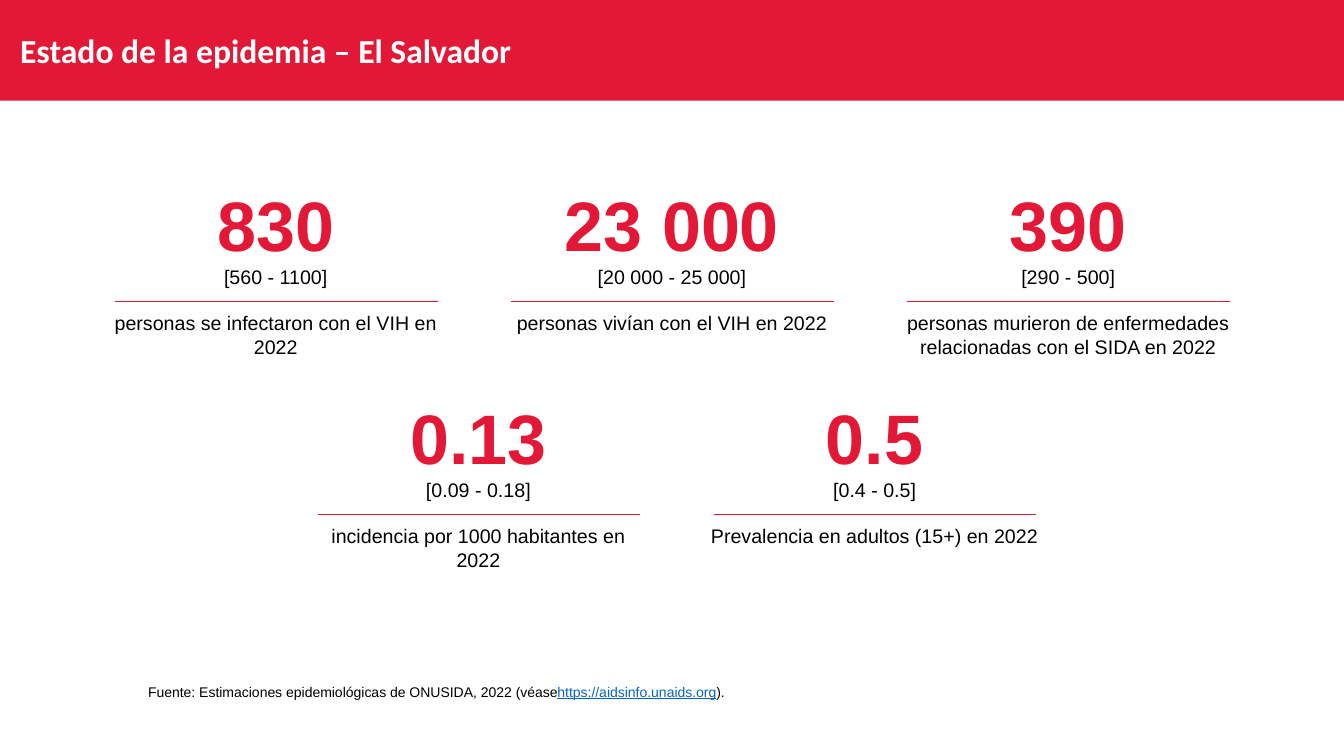
from dataclasses import dataclass

from lxml.etree import SubElement
from pptx import Presentation
from pptx.dml.color import RGBColor
from pptx.enum.shapes import MSO_CONNECTOR, MSO_SHAPE
from pptx.enum.text import MSO_ANCHOR, MSO_AUTO_SIZE, PP_ALIGN
from pptx.oxml.ns import qn
from pptx.util import Inches, Pt


@dataclass(frozen=True)
class Theme:
    red: RGBColor = RGBColor(0xE2, 0x18, 0x36)
    white: RGBColor = RGBColor(0xFF, 0xFF, 0xFF)
    black: RGBColor = RGBColor(0, 0, 0)
    link: RGBColor = RGBColor(0x05, 0x63, 0xC1)
    heading_font: str = "Calibri"
    body_font: str = "Arial"
    heading: int = 24
    figure: int = 50
    detail: int = 14
    source: int = 10
    rule: float = 0.5


THEME = Theme()
SLIDE_WIDTH, SLIDE_HEIGHT = 13.33, 7.5
CARD_WIDTH, CARD_PITCH = 3.49, 3.93

# Each row: left of its first card, top, and (figure, range, meaning) per card
INDICATOR_ROWS = [
    (0.99, 1.75, [
        ("830", "[560 - 1100]", "personas se infectaron con el VIH en 2022"),
        ("23 000", "[20 000 - 25 000]", "personas vivían con el VIH en 2022"),
        ("390", "[290 - 500]",
         "personas murieron de enfermedades relacionadas con el SIDA en 2022"),
    ]),
    (3, 3.86, [
        ("0.13", "[0.09 - 0.18]", "incidencia por 1000 habitantes en 2022"),
        ("0.5", "[0.4 - 0.5]", "Prevalencia en adultos (15+) en 2022"),
    ]),
]


def add_run(paragraph, text, size, color, font=THEME.body_font, bold=False, underline=False):
    run = paragraph.add_run()
    run.text = text
    run.font.name = font
    run.font.size = Pt(size)
    run.font.color.rgb = color
    run.font.bold = bold
    run.font.underline = underline


def add_header(slide, left, top, width, height):
    band = slide.shapes.add_shape(
        MSO_SHAPE.RECTANGLE, Inches(left), Inches(top), Inches(width), Inches(height))
    band.shadow.inherit = False
    band.fill.solid()
    band.fill.fore_color.rgb = THEME.red
    band.line.fill.background()
    frame = band.text_frame
    frame.word_wrap = True
    frame.vertical_anchor = MSO_ANCHOR.MIDDLE
    frame.margin_left = frame.margin_right = Inches(0.2)
    frame.margin_top, frame.margin_bottom = Inches(0.1), Inches(0.05)
    title = frame.paragraphs[0]
    title.alignment = PP_ALIGN.LEFT
    title.line_spacing = 0.9
    title.space_before = Pt(10)
    add_run(title, "Estado de la epidemia – El Salvador",
            THEME.heading, THEME.white, THEME.heading_font, bold=True)


def add_rule(slide, left, top, width):
    rule = slide.shapes.add_connector(
        MSO_CONNECTOR.STRAIGHT, Inches(left), Inches(top), Inches(left + width), Inches(top))
    rule.line.color.rgb = THEME.red
    rule.line.width = Pt(THEME.rule)
    SubElement(rule._element.spPr, qn("a:effectLst"))


def add_indicator(slide, left, top, width, figure, interval, meaning):
    """Place a large figure and its range above a rule, and its meaning below."""
    card = slide.shapes.add_textbox(Inches(left), Inches(top), Inches(width), Inches(1.88))
    frame = card.text_frame
    frame.word_wrap = True
    frame.auto_size = MSO_AUTO_SIZE.SHAPE_TO_FIT_TEXT
    figure_line = frame.paragraphs[0]
    interval_line, meaning_line = frame.add_paragraph(), frame.add_paragraph()
    meaning_line.space_before = Pt(16)
    for line in frame.paragraphs:
        line.alignment = PP_ALIGN.CENTER
    add_run(figure_line, figure, THEME.figure, THEME.red, bold=True)
    add_run(interval_line, interval, THEME.detail, THEME.black)
    add_run(meaning_line, meaning, THEME.detail, THEME.black)
    add_rule(slide, left + 0.15, top + 1.24, width - 0.29)


def add_source(slide, left, top, width, height):
    source = slide.shapes.add_textbox(Inches(left), Inches(top), Inches(width), Inches(height))
    frame = source.text_frame
    frame.word_wrap = False
    frame.auto_size = MSO_AUTO_SIZE.SHAPE_TO_FIT_TEXT
    citation = frame.paragraphs[0]
    add_run(citation, "Fuente: Estimaciones epidemiológicas de ONUSIDA, 2022 (véase",
            THEME.source, THEME.black)
    add_run(citation, "https://aidsinfo.unaids.org", THEME.source, THEME.link, underline=True)
    add_run(citation, ").", THEME.source, THEME.black)


def main():
    deck = Presentation()
    deck.slide_width, deck.slide_height = Inches(SLIDE_WIDTH), Inches(SLIDE_HEIGHT)
    slide = deck.slides.add_slide(deck.slide_layouts[6])
    add_header(slide, 0, 0, SLIDE_WIDTH, 1)
    add_source(slide, 1.37, 6.73, 6.01, 0.27)
    for left, top, indicators in INDICATOR_ROWS:
        for column, indicator in enumerate(indicators):
            add_indicator(slide, left + column * CARD_PITCH, top, CARD_WIDTH, *indicator)
    deck.save("out.pptx")


if __name__ == "__main__":
    main()
